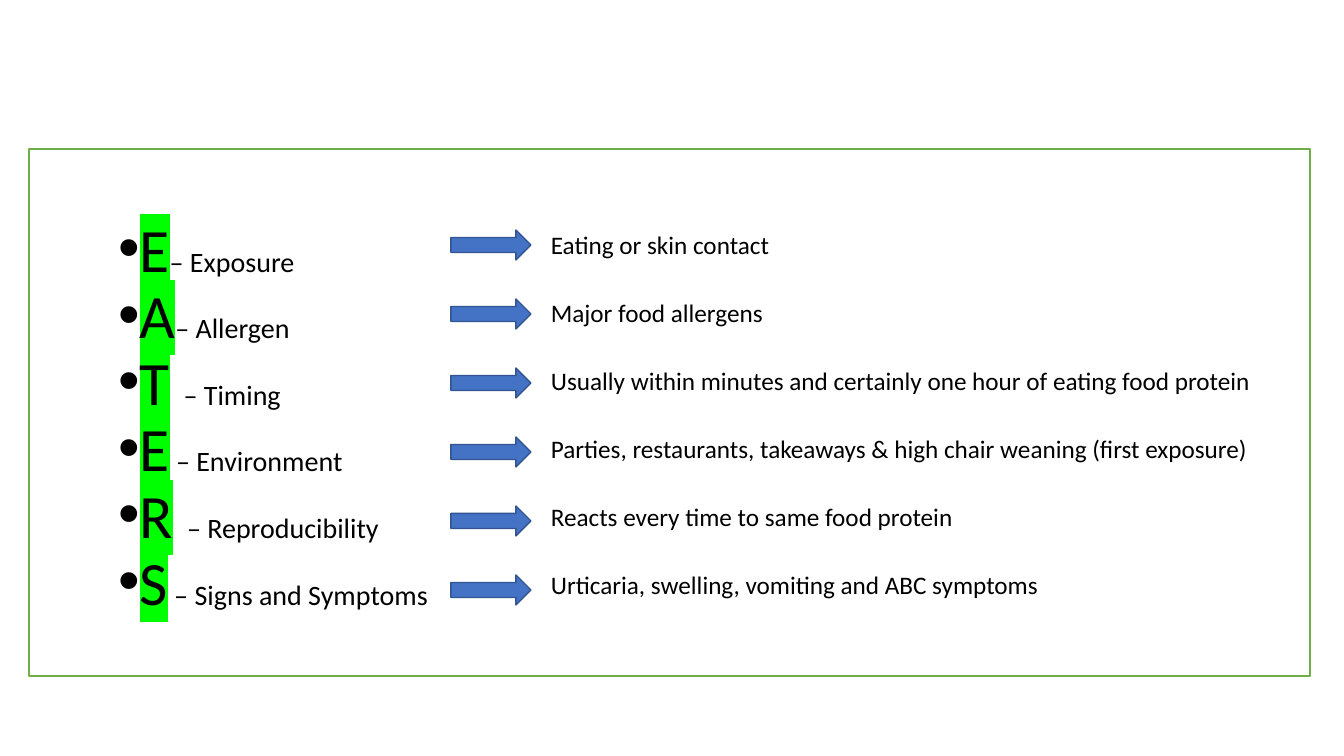
import pptx
import pptx.util
import pptx.dml.color
import pptx.enum.shapes
import pptx.enum.text
import lxml.etree

SLIDE = (1344, 756)
LETTERS = [
    ("E", "", "– Exposure", "Eating or skin contact"),
    ("A", "", "– Allergen", "Major food allergens"),
    ("T", " ", "– Timing", "Usually within minutes and certainly one hour of eating food protein"),
    ("E", "", " – Environment", "Parties, restaurants, takeaways & high chair weaning (first exposure)"),
    ("R", " ", "– Reproducibility", "Reacts every time to same food protein"),
    ("S", "", " – Signs and Symptoms", "Urticaria, swelling, vomiting and ABC symptoms"),
]
COLORS = {"text": "000000", "mark": "00FF00", "panel": "FFFFFF", "border": "70AD47",
          "arrow": "4472C4", "arrow_line": "325491"}
PANEL = (29, 149, 1281, 527)
BODY = (108, 174, 1202, 485)
BODY_TOP_INSET = 51
ARROW = (451, 230, 80, 30)
ARROW_STEP = 69
DETAIL = (541, 224, 731, 40)
DETAIL_STEP = 68
PX = 914400 / 100.8
LETTER_SIZE, WORD_SIZE, DETAIL_SIZE = 44, 20, 18
PARAGRAPH = {"line_spacing": 0.8, "space_before": pptx.util.Pt(0), "space_after": pptx.util.Pt(5.3)}
NS = "http://schemas.openxmlformats.org/drawingml/2006/main"


def px(n):
    return round(n * PX)


def box(values):
    return [px(v) for v in values]


def rgb(name):
    return pptx.dml.color.RGBColor.from_string(COLORS[name])


def set_all(target, values):
    for name, value in values.items():
        setattr(target, name, value)


def add_child(parent, tag, **attrs):
    return lxml.etree.SubElement(parent, f"{{{NS}}}{tag}", **attrs)


def add_run(p, text, size, mark=False):
    r = p.add_run()
    r.text = text
    set_all(r.font, {"size": pptx.util.Pt(size), "name": "Calibri"})
    r.font.color.rgb = rgb("text")
    if mark:
        highlight = lxml.etree.Element(f"{{{NS}}}highlight")
        add_child(highlight, "srgbClr", val=COLORS["mark"])
        r.font._element.find(f"{{{NS}}}solidFill").addnext(highlight)


def add_block(s, kind, at, fill, line):
    sp = s.shapes.add_shape(kind, *box(at))
    sp.shadow.inherit = False
    sp.fill.solid()
    sp.fill.fore_color.rgb = rgb(fill)
    sp.line.color.rgb = rgb(line)
    sp.line.width = pptx.util.Pt(1)


def fill_body(sp):
    set_all(sp, dict(zip(("left", "top", "width", "height"), box(BODY))))
    tf = sp.text_frame
    set_all(tf, {"auto_size": pptx.enum.text.MSO_AUTO_SIZE.NONE, "word_wrap": True,
                 "vertical_anchor": pptx.enum.text.MSO_ANCHOR.TOP,
                 "margin_top": px(BODY_TOP_INSET)})
    for i, (letter, gap, word, _) in enumerate(LETTERS):
        p = tf.add_paragraph() if i else tf.paragraphs[0]
        set_all(p, PARAGRAPH)
        pPr = p._p.get_or_add_pPr()
        pPr.set("marL", "0")
        pPr.set("indent", "-228600")
        add_child(pPr, "buFont", typeface="Arial")
        add_child(pPr, "buChar", char="•")
        add_run(p, letter, LETTER_SIZE, mark=True)
        if gap:
            add_run(p, gap, LETTER_SIZE)
        add_run(p, word, WORD_SIZE)


def add_detail(s, text, at):
    tf = s.shapes.add_textbox(*box(at)).text_frame
    tf.word_wrap = False
    add_run(tf.paragraphs[0], text, DETAIL_SIZE)


def main():
    prs = pptx.Presentation()
    prs.slide_width, prs.slide_height = box(SLIDE)
    s = prs.slides.add_slide(prs.slide_layouts[1])
    title, body = s.placeholders
    title._element.getparent().remove(title._element)
    shapes = pptx.enum.shapes.MSO_SHAPE
    add_block(s, shapes.RECTANGLE, PANEL, "panel", "border")
    s.shapes._spTree.append(body._element)
    fill_body(body)
    for i, (*_, detail) in enumerate(LETTERS):
        x, y, w, h = DETAIL
        add_detail(s, detail, (x, y + i * DETAIL_STEP, w, h))
        x, y, w, h = ARROW
        add_block(s, shapes.RIGHT_ARROW, (x, y + i * ARROW_STEP, w, h), "arrow", "arrow_line")
    prs.save("out.pptx")


if __name__ == "__main__":
    main()
